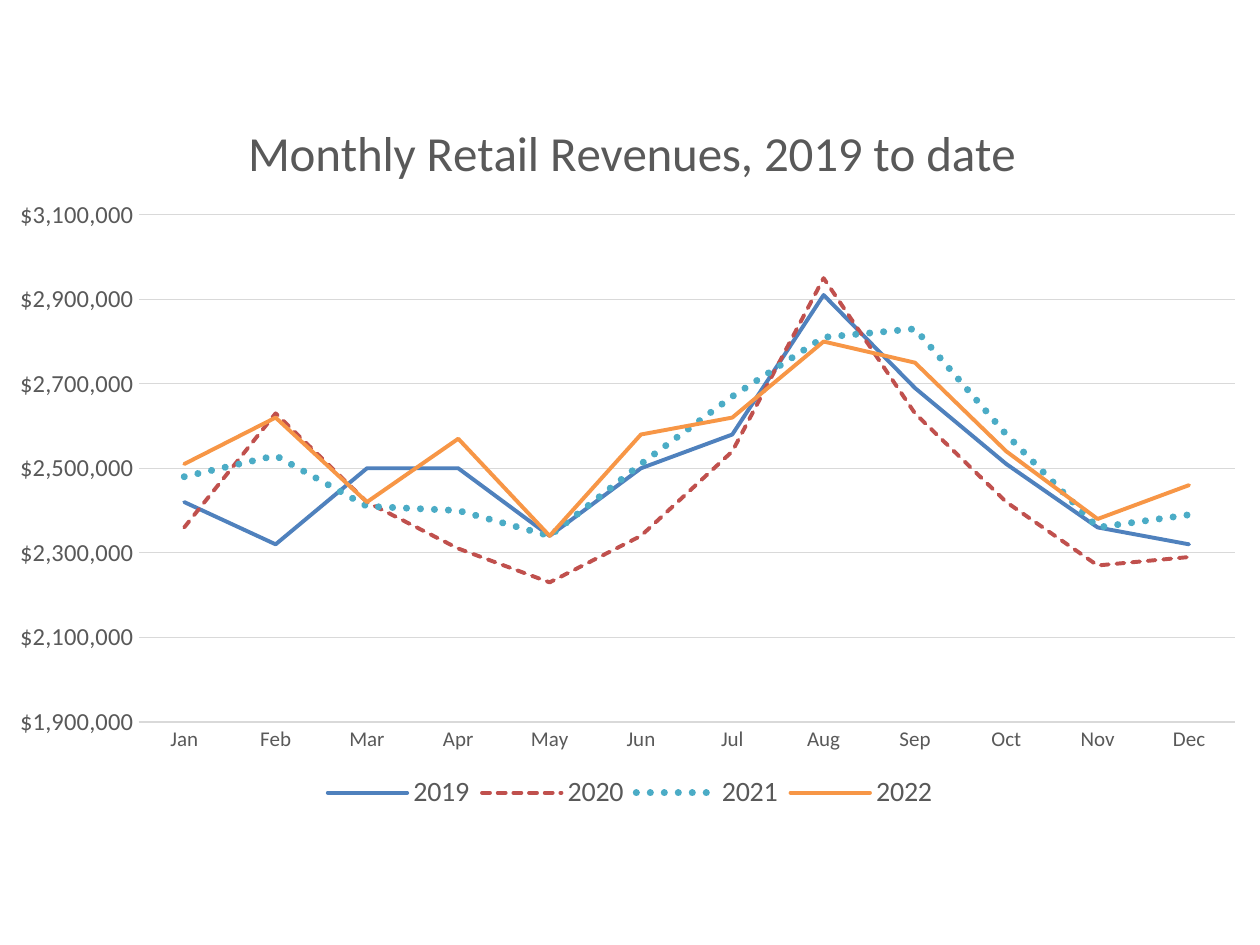
from lxml.etree import SubElement
from pptx import Presentation
from pptx.chart.data import CategoryChartData
from pptx.dml.color import RGBColor
from pptx.enum.chart import XL_CHART_TYPE, XL_LEGEND_POSITION, XL_TICK_MARK
from pptx.enum.dml import MSO_LINE
from pptx.oxml.ns import qn
from pptx.util import Inches, Pt

COLORS = {"text": "595959", "grid": "D9D9D9", "2019": "4F81BD",
          "2020": "C0504D", "2021": "4BACC6", "2022": "F79646"}
MONTHS = "Jan Feb Mar Apr May Jun Jul Aug Sep Oct Nov Dec".split()
# Monthly revenue in thousands of dollars
SALES = {
    "2019": [2420, 2320, 2500, 2500, 2340, 2500, 2580, 2910, 2690, 2510, 2360, 2320],
    "2020": [2360, 2630, 2420, 2310, 2230, 2340, 2540, 2950, 2630, 2420, 2270, 2290],
    "2021": [2480, 2530, 2410, 2400, 2340, 2510, 2670, 2810, 2830, 2580, 2360, 2390],
    "2022": [2510, 2620, 2420, 2570, 2340, 2580, 2620, 2800, 2750, 2540, 2380, 2460],
}
DASHES = {"2020": MSO_LINE.SQUARE_DOT, "2021": MSO_LINE.ROUND_DOT}
WIDTHS = {"2021": 4}


def style(font, size):
    font.name = "Calibri"
    font.size = Pt(size)
    font.bold = False
    font.color.rgb = RGBColor.from_string(COLORS["text"])


def place(part, index, **values):
    """Give a chart part a manual layout, in fractions of the chart."""
    for old in part.findall(qn("c:layout")):
        part.remove(old)
    layout = SubElement(part, qn("c:layout"))
    part.insert(index, layout)
    manual = SubElement(layout, qn("c:manualLayout"))
    for name, value in values.items():
        SubElement(manual, qn("c:" + name)).set("val", str(value))


prs = Presentation()
prs.slide_width, prs.slide_height = Inches(10), Inches(7.5)
slide = prs.slides.add_slide(prs.slide_layouts[6])

data = CategoryChartData(number_format='"$"#,##0')
data.categories = MONTHS
for year, sales in SALES.items():
    data.add_series(year, [value * 1000 for value in sales])
chart = slide.shapes.add_chart(XL_CHART_TYPE.LINE, Inches(0), Inches(0.58),
                               Inches(10), Inches(5.92), data).chart
chart.font.name = "Calibri"
chart.font.size = Pt(10)

# Title, plot and legend
chart.has_title = True
title = chart.chart_title
title.include_in_layout = False
title.text_frame.text = "Monthly Retail Revenues, 2019 to date"
style(title.text_frame.paragraphs[0].runs[0].font, 28)
chart.has_legend = True
legend = chart.legend
legend.position = XL_LEGEND_POSITION.BOTTOM
legend.include_in_layout = False
style(legend.font, 16)

edges = {"xMode": "edge", "yMode": "edge"}
place(title._element, 1, **edges, x=0.19, y=0.05)
place(legend._element, 1, **edges, x=0.25, y=0.93, w=0.5, h=0.07)
place(chart._chartSpace.chart.plotArea, 0, layoutTarget="inner", **edges,
      x=0.11, y=0.19, w=0.87, h=0.68)

# Axes
months, money = chart.category_axis, chart.value_axis
for axis, size in ((months, 12), (money, 14)):
    axis.major_tick_mark = axis.minor_tick_mark = XL_TICK_MARK.NONE
    style(axis.tick_labels.font, size)
money.minimum_scale, money.maximum_scale = 1900000, 3100000
money.major_unit = 200000
money.tick_labels.number_format = '"$"#,##0'
money.tick_labels.number_format_is_linked = False
money.format.line.fill.background()
money.has_major_gridlines = True
for line in (months.format.line, money.major_gridlines.format.line):
    line.color.rgb = RGBColor.from_string(COLORS["grid"])
    line.width = Pt(0.75)

# Lines
chart.plots[0].vary_by_categories = False
for series in chart.plots[0].series:
    series.smooth = False
    line = series.format.line
    line.color.rgb = RGBColor.from_string(COLORS[series.name])
    line.width = Pt(WIDTHS.get(series.name, 2.25))
    if series.name in DASHES:
        line.dash_style = DASHES[series.name]
    series._element.find(".//" + qn("a:ln")).set("cap", "rnd")

prs.save("out.pptx")
